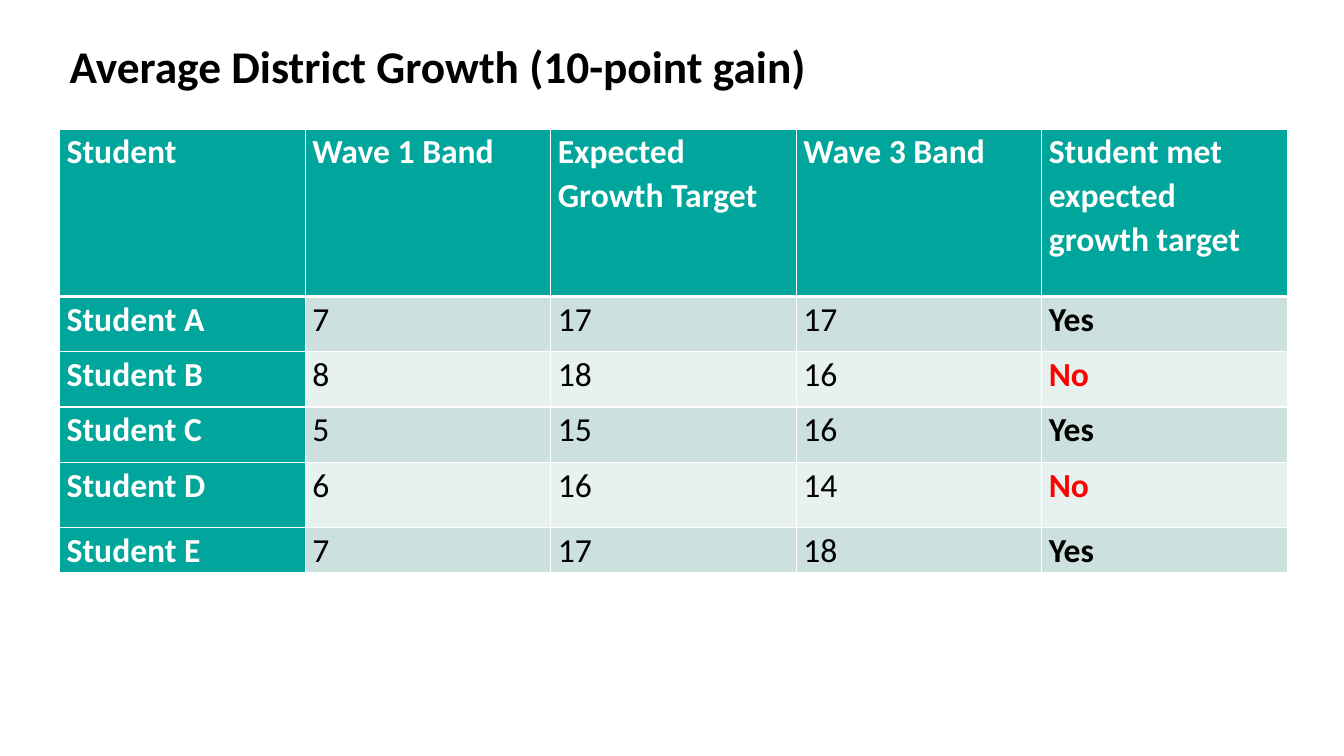
from dataclasses import dataclass

from lxml.etree import SubElement
from pptx import Presentation
from pptx.dml.color import RGBColor
from pptx.enum.text import MSO_ANCHOR
from pptx.oxml.ns import qn
from pptx.slide import Slide
from pptx.table import _Cell
from pptx.text.text import _Paragraph
from pptx.util import Pt


@dataclass(frozen=True)
class Theme:
    font: str = "Calibri"
    title_size: float = 32.4
    table_size: float = 24
    teal: str = "00A69B"
    bands: tuple[str, str] = ("CCE1DE", "E7F1EF")
    white: str = "FFFFFF"
    black: str = "000000"
    red: str = "FF0000"
    thin: float = 1
    thick: float = 3


@dataclass(frozen=True)
class Student:
    name: str
    wave_1: int
    target: int
    wave_3: int
    height: float = 39.5

    def texts(self) -> list[str]:
        met = "Yes" if self.wave_3 >= self.target else "No"
        return [self.name, str(self.wave_1), str(self.target), str(self.wave_3), met]


THEME = Theme()
TITLE = "Average District Growth (10-point gain)"
HEADERS = ["Student", "Wave 1 Band", "Expected Growth Target", "Wave 3 Band",
           "Student met expected growth target"]
STUDENTS = [
    Student("Student A", 7, 17, 17),
    Student("Student B", 8, 18, 16),
    Student("Student C", 5, 15, 16),
    Student("Student D", 6, 16, 14, height=46.4),
    Student("Student E", 7, 17, 18, height=32.2),
]
LEFT = 42.6
TABLE_TOP = 92.2
COLUMN_WIDTH = 175.4
HEADER_HEIGHT = 119.6


def style_text(p: _Paragraph, size: float, color: str, bold: bool) -> None:
    p.font.name = THEME.font
    p.font.size = Pt(size)
    p.font.bold = bold
    p.font.color.rgb = RGBColor.from_string(color)


def add_title(s: Slide) -> None:
    tf = s.shapes.add_textbox(Pt(LEFT), Pt(21.6), Pt(828), Pt(49.7)).text_frame
    tf.word_wrap = True
    tf.vertical_anchor = MSO_ANCHOR.MIDDLE
    p = tf.paragraphs[0]
    p.text = TITLE
    style_text(p, THEME.title_size, THEME.black, True)


def set_borders(cell: _Cell, top: float, bottom: float) -> None:
    tc_pr = cell._tc.get_or_add_tcPr()
    widths = {"a:lnL": THEME.thin, "a:lnR": THEME.thin, "a:lnT": top, "a:lnB": bottom}
    for tag, width in widths.items():
        ln = SubElement(tc_pr, qn(tag), w=str(Pt(width)))
        SubElement(SubElement(ln, qn("a:solidFill")), qn("a:srgbClr"), val=THEME.white)


def fill_cell(cell: _Cell, text: str, row: int, col: int) -> None:
    heading = row == 0 or col == 0
    verdict = col == len(HEADERS) - 1
    # Borders come before the fill in the cell properties
    set_borders(cell, top=THEME.thick if row == 1 else THEME.thin,
                bottom=THEME.thick if row == 0 else THEME.thin)
    cell.fill.solid()
    fill = THEME.teal if heading else THEME.bands[(row - 1) % 2]
    cell.fill.fore_color.rgb = RGBColor.from_string(fill)
    cell.margin_left = cell.margin_right = Pt(5.1)
    cell.margin_top = cell.margin_bottom = Pt(0)

    p = cell.text_frame.paragraphs[0]
    p.text = text
    p.line_spacing = 1.07
    p.space_after = Pt(8)
    color = THEME.white if heading else THEME.red if text == "No" else THEME.black
    style_text(p, THEME.table_size, color, heading or verdict)


def add_growth_table(s: Slide) -> None:
    rows = [HEADERS] + [student.texts() for student in STUDENTS]
    heights = [HEADER_HEIGHT] + [student.height for student in STUDENTS]
    table = s.shapes.add_table(
        len(rows), len(HEADERS), Pt(LEFT), Pt(TABLE_TOP),
        Pt(COLUMN_WIDTH * len(HEADERS)), Pt(sum(heights))).table
    table.first_col = True
    for column in table.columns:
        column.width = Pt(COLUMN_WIDTH)
    for row, (texts, height) in enumerate(zip(rows, heights)):
        table.rows[row].height = Pt(height)
        for col, text in enumerate(texts):
            fill_cell(table.cell(row, col), text, row, col)


def main() -> None:
    prs = Presentation()
    prs.slide_width, prs.slide_height = Pt(960), Pt(540)
    s = prs.slides.add_slide(prs.slide_layouts[6])
    add_title(s)
    add_growth_table(s)
    prs.save("out.pptx")


if __name__ == "__main__":
    main()
